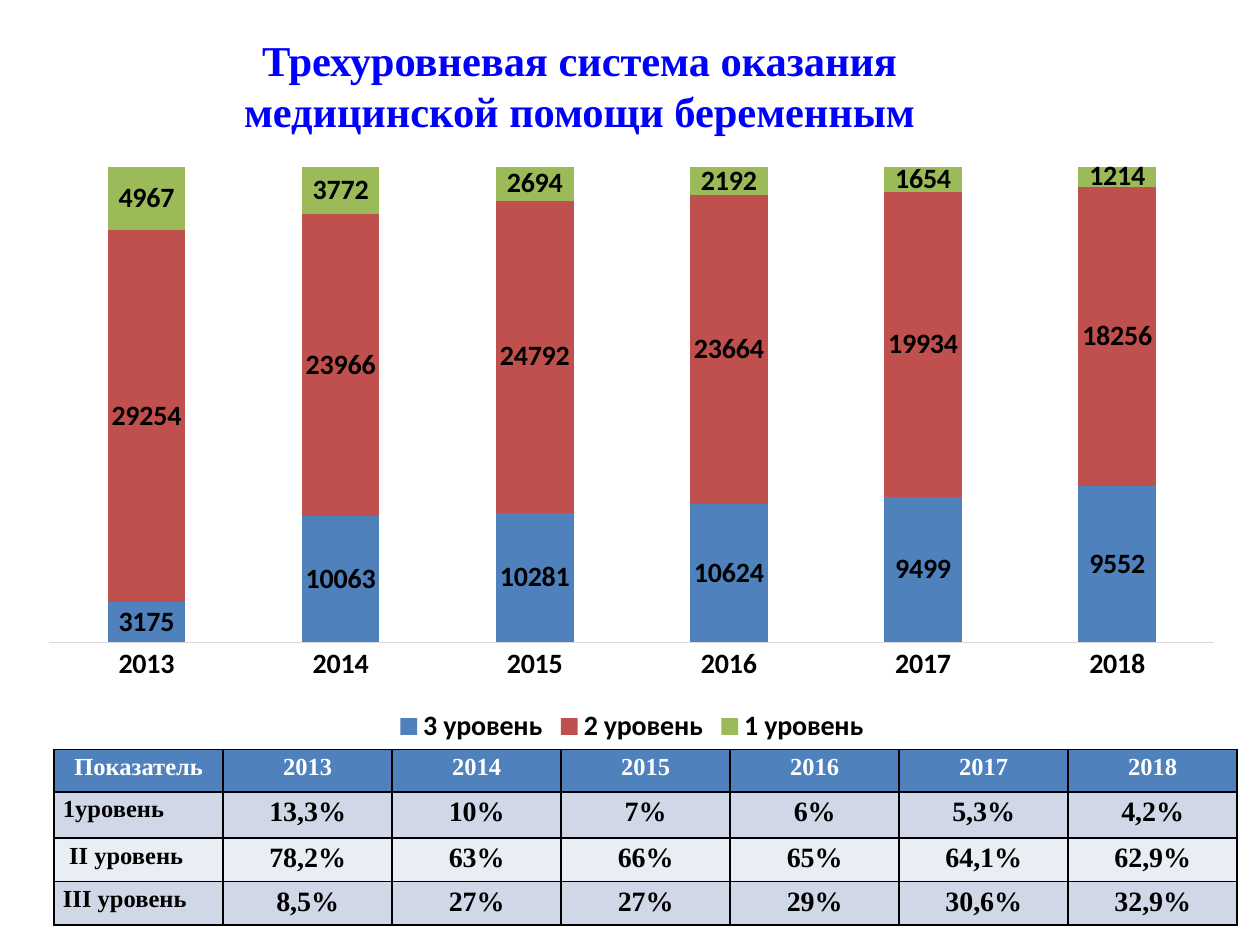
from dataclasses import dataclass
from typing import Any

from lxml import etree
from pptx import Presentation, util as u
from pptx.chart.data import CategoryChartData
from pptx.dml.color import RGBColor
from pptx.enum import chart as charts, text
from pptx.oxml import parse_xml
from pptx.oxml.ns import nsdecls, qn

WIDTH, HEIGHT = u.Inches(10), u.Inches(7.5)


@dataclass(frozen=True)
class Theme:
    serif: str = "Times New Roman"
    sans: str = "Calibri"
    title: str = "0000FF"
    ink: str = "000000"
    paper: str = "FFFFFF"
    header: str = "4F81BD"
    bands: tuple[str, str] = ("D0D8E8", "E9EDF4")
    axis: str = "D9D9D9"
    title_size: float = 24.3
    label_size: float = 14
    value_size: float = 16


@dataclass(frozen=True)
class Area:
    """A rectangle in shares of the slide's size."""
    left: float
    top: float
    width: float
    height: float

    def lengths(self) -> tuple[int, int, int, int]:
        return (int(self.left * WIDTH), int(self.top * HEIGHT),
                int(self.width * WIDTH), int(self.height * HEIGHT))


@dataclass(frozen=True)
class Level:
    name: str
    color: str
    births: tuple[int, ...]


@dataclass(frozen=True)
class ShareRow:
    label: str
    shares: tuple[str, ...]


THEME = Theme()
TITLE_AREA = Area(0.161, 0.017, 0.598, 0.147)
CHART_AREA = Area(0.02, 0.164, 0.963, 0.629)
TABLE_AREA = Area(0.043, 0.793, 0.939, 0.187)
ROW_SHARES = (0.045, 0.049, 0.046, 0.046)
PLOT_LAYOUT = {"x": 0.02, "y": 0.02, "w": 0.96, "h": 0.8}

TITLE = ("Трехуровневая система оказания", "медицинской помощи беременным")
YEARS = tuple(str(year) for year in range(2013, 2019))
LEVELS = (
    Level("3 уровень", "4F81BD", (3175, 10063, 10281, 10624, 9499, 9552)),
    Level("2 уровень", "C0504D", (29254, 23966, 24792, 23664, 19934, 18256)),
    Level("1 уровень", "9BBB59", (4967, 3772, 2694, 2192, 1654, 1214)),
)
SHARE_ROWS = (
    ShareRow("1уровень", ("13,3%", "10%", "7%", "6%", "5,3%", "4,2%")),
    ShareRow(" II уровень", ("78,2%", "63%", "66%", "65%", "64,1%", "62,9%")),
    ShareRow("III уровень", ("8,5%", "27%", "27%", "29%", "30,6%", "32,9%")),
)


def apply(target: Any, values: dict[str, Any]) -> None:
    for name, value in values.items():
        setattr(target, name, value)


def style_font(font: Any, name: str, size: float, color: str) -> None:
    apply(font, {"name": name, "size": u.Pt(size), "bold": True})
    font.color.rgb = RGBColor.from_string(color)


def paint(fill: Any, color: str) -> None:
    fill.solid()
    fill.fore_color.rgb = RGBColor.from_string(color)


def add_title(page: Any) -> None:
    box = page.shapes.add_textbox(*TITLE_AREA.lengths())
    paint(box.fill, THEME.paper)
    frame = box.text_frame
    apply(frame, {"word_wrap": True, "vertical_anchor": text.MSO_ANCHOR.MIDDLE})
    para = frame.paragraphs[0]
    para.alignment = text.PP_ALIGN.CENTER
    for number, line in enumerate(TITLE):
        if number:
            para.add_line_break()
        span = para.add_run()
        span.text = line
        style_font(span.font, THEME.serif, THEME.title_size, THEME.title)


def set_plot_layout(chart: Any) -> None:
    """Fix the inner plot area in shares of the chart's size."""
    modes = '<c:layoutTarget val="inner"/><c:xMode val="edge"/><c:yMode val="edge"/>'
    sizes = "".join(f'<c:{key} val="{share}"/>' for key, share in PLOT_LAYOUT.items())
    layout = parse_xml(f'<c:layout {nsdecls("c")}><c:manualLayout>{modes}{sizes}'
                       "</c:manualLayout></c:layout>")
    plot_area = chart.plots[0]._element.getparent()
    for old in plot_area.findall(qn("c:layout")):
        plot_area.remove(old)
    plot_area.insert(0, layout)


def add_level_chart(page: Any) -> None:
    data = CategoryChartData()
    data.categories = YEARS
    for level in LEVELS:
        data.add_series(level.name, level.births)
    chart = page.shapes.add_chart(charts.XL_CHART_TYPE.COLUMN_STACKED_100,
                                  *CHART_AREA.lengths(), data).chart
    style_font(chart.font, THEME.sans, THEME.value_size, THEME.ink)
    apply(chart, {"has_title": False, "has_legend": True})
    apply(chart.legend, {"position": charts.XL_LEGEND_POSITION.BOTTOM,
                         "include_in_layout": False})
    apply(chart.value_axis, {"visible": False, "has_major_gridlines": False})
    axis = chart.category_axis
    axis.major_tick_mark = charts.XL_TICK_MARK.NONE
    axis.format.line.width = u.Pt(0.75)
    axis.format.line.color.rgb = RGBColor.from_string(THEME.axis)

    plot = chart.plots[0]
    apply(plot, {"gap_width": 150, "overlap": 100,
                 "vary_by_categories": False, "has_data_labels": True})
    plot.data_labels.show_value = True
    style_font(plot.data_labels.font, THEME.sans, THEME.value_size, THEME.ink)
    for series, level in zip(plot.series, LEVELS):
        paint(series.format.fill, level.color)
    set_plot_layout(chart)


def add_borders(cell: Any) -> None:
    properties = cell._tc.get_or_add_tcPr()
    for index, side in enumerate(("lnL", "lnR", "lnT", "lnB")):
        line = etree.Element(qn(f"a:{side}"), w=str(u.Pt(1)))
        fill = etree.SubElement(line, qn("a:solidFill"))
        etree.SubElement(fill, qn("a:srgbClr"), val=THEME.ink)
        properties.insert(index, line)


def fill_cell(cell: Any, words: str, size: float, color: str, back: str,
              centred: bool = True) -> None:
    apply(cell, {"margin_left": u.Inches(0.07), "margin_right": u.Inches(0.07),
                 "margin_top": 0, "margin_bottom": 0})
    paint(cell.fill, back)
    add_borders(cell)
    para = cell.text_frame.paragraphs[0]
    align = text.PP_ALIGN.CENTER if centred else text.PP_ALIGN.LEFT
    apply(para, {"alignment": align, "line_spacing": 1.15, "space_after": u.Pt(10)})
    span = para.add_run()
    span.text = words
    style_font(span.font, THEME.serif, size, color)


def add_share_table(page: Any) -> None:
    table = page.shapes.add_table(len(SHARE_ROWS) + 1, len(YEARS) + 1,
                                  *TABLE_AREA.lengths()).table
    for row, share in zip(table.rows, ROW_SHARES):
        row.height = int(share * HEIGHT)
    for column, heading in enumerate(("Показатель", *YEARS)):
        fill_cell(table.cell(0, column), heading, THEME.label_size,
                  THEME.paper, THEME.header)
    for number, row in enumerate(SHARE_ROWS):
        band = THEME.bands[number % 2]
        fill_cell(table.cell(number + 1, 0), row.label, THEME.label_size,
                  THEME.ink, band, centred=False)
        for column, share in enumerate(row.shares, start=1):
            fill_cell(table.cell(number + 1, column), share, THEME.value_size,
                      THEME.ink, band)


def main() -> None:
    deck = Presentation()
    apply(deck, {"slide_width": WIDTH, "slide_height": HEIGHT})
    page = deck.slides.add_slide(deck.slide_layouts[6])
    add_title(page)
    add_share_table(page)
    add_level_chart(page)
    deck.save("out.pptx")


if __name__ == "__main__":
    main()
